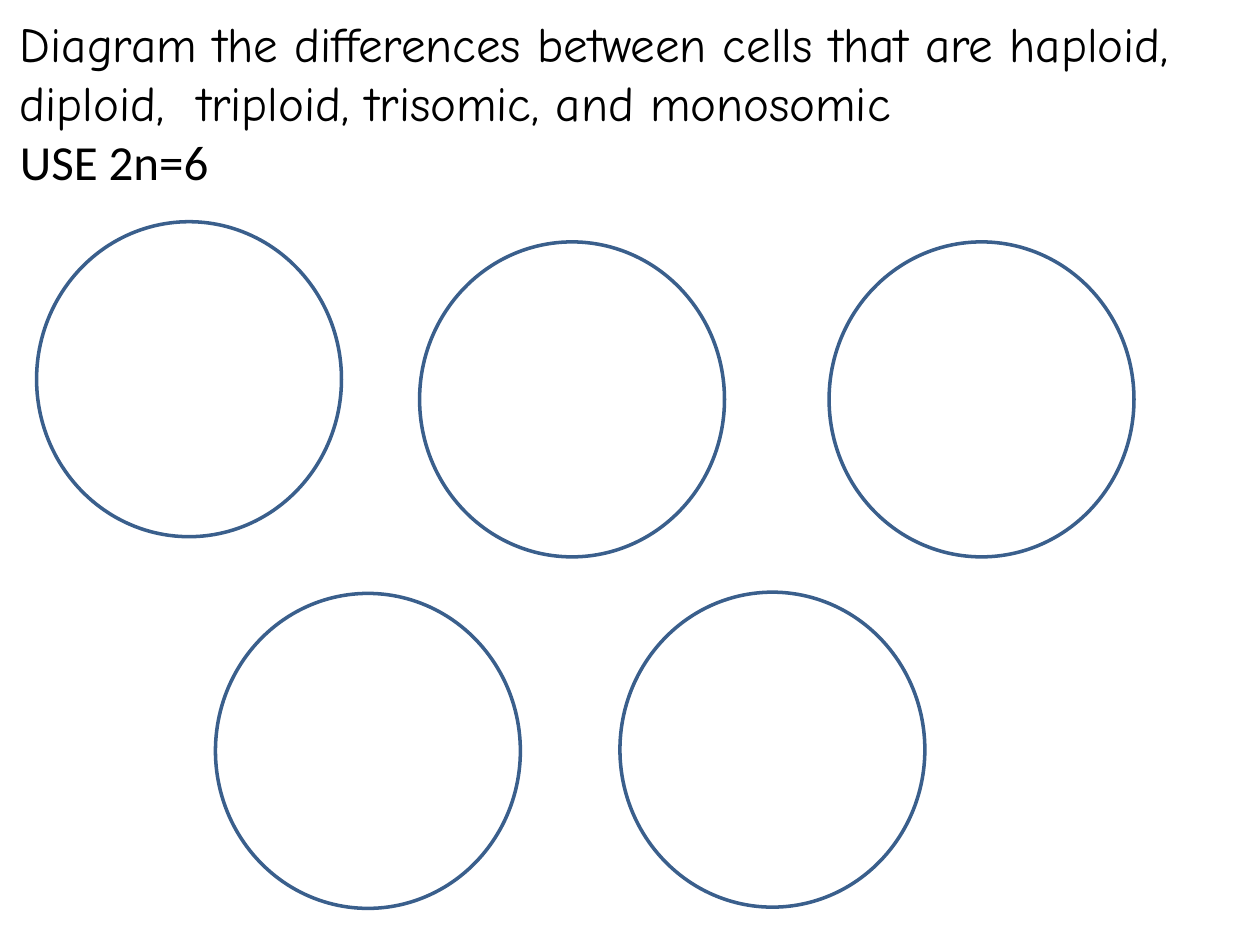
from pptx import Presentation
from pptx.dml.color import RGBColor
from pptx.enum.shapes import MSO_SHAPE
from pptx.enum.text import MSO_AUTO_SIZE
from pptx.util import Inches, Pt

OVAL = MSO_SHAPE.OVAL
GROW = MSO_AUTO_SIZE.SHAPE_TO_FIT_TEXT

INK = "000000"
EDGE = "3A5F8C"
CELL_W, CELL_H = 2.42, 2.5


def color(code):
    return RGBColor.from_string(code)


class Board:
    """Holds the style and the current slide."""

    def __init__(self, slide, size=28, ink=INK, edge=EDGE, weight=2):
        self.slide = slide
        self.size = size
        self.ink = ink
        self.edge = edge
        self.weight = weight

    def text(self, left, top, width, height, lines):
        box = self.slide.shapes.add_textbox(
            Inches(left), Inches(top), Inches(width), Inches(height))
        frame = box.text_frame
        frame.word_wrap = True
        frame.auto_size = GROW
        frame.text = "\n".join(words for words, _ in lines)
        for para, (_, face) in zip(frame.paragraphs, lines):
            font = para.runs[0].font
            font.name = face
            font.size = Pt(self.size)
            font.color.rgb = color(self.ink)

    def cell(self, left, top):
        oval = self.slide.shapes.add_shape(
            OVAL, Inches(left), Inches(top), Inches(CELL_W), Inches(CELL_H))
        oval.shadow.inherit = False
        oval.fill.background()
        oval.line.color.rgb = color(self.edge)
        oval.line.width = Pt(self.weight)


def main():
    deck = Presentation()
    deck.slide_width, deck.slide_height = Inches(10), Inches(7.5)
    board = Board(deck.slides.add_slide(deck.slide_layouts[6]))

    # Task
    board.text(0.06, 0.06, 9.94, 1.51, [
        ("Diagram the differences between cells that are haploid, diploid,  "
         "triploid, trisomic, and monosomic", "Comic Neue"),
        ("USE 2n=6", "Calibri"),
    ])

    # Empty cells: three above, two below
    spots = [(3.33, 1.92), (0.29, 1.76), (6.58, 1.92),
             (1.71, 4.71), (4.92, 4.7)]
    for left, top in spots:
        board.cell(left, top)

    deck.save("out.pptx")


if __name__ == "__main__":
    main()
